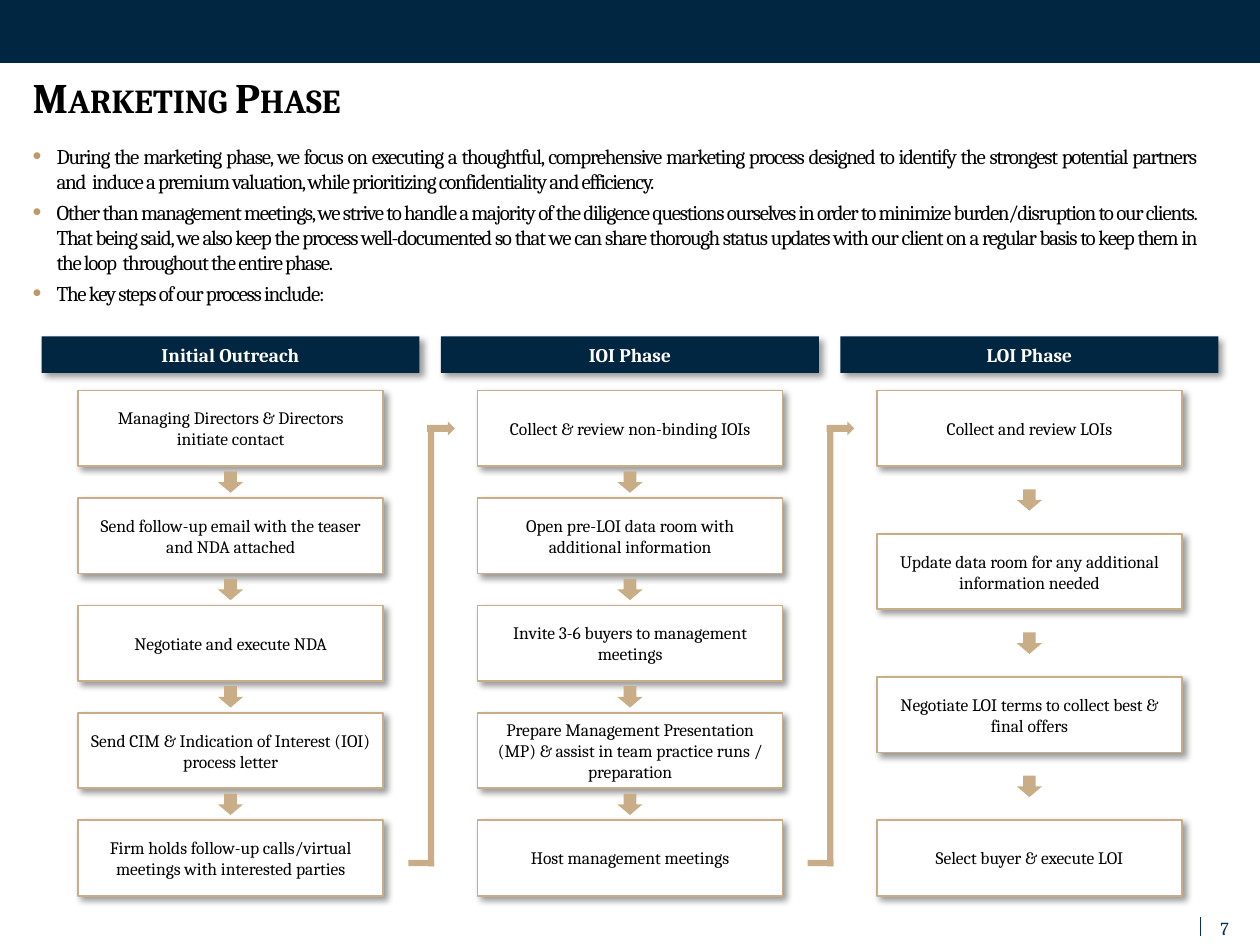
from lxml import etree
from pptx import Presentation
from pptx.dml.color import RGBColor
from pptx.enum.shapes import MSO_CONNECTOR, MSO_SHAPE
from pptx.enum.text import MSO_ANCHOR, MSO_AUTO_SIZE, PP_ALIGN
from pptx.oxml.ns import qn
from pptx.util import Inches, Pt

RECT, DOWN_ARROW = MSO_SHAPE.RECTANGLE, MSO_SHAPE.DOWN_ARROW
CENTER, JUSTIFY = PP_ALIGN.CENTER, PP_ALIGN.JUSTIFY
MIDDLE, TOP = MSO_ANCHOR.MIDDLE, MSO_ANCHOR.TOP
NAVY, RULE, TAN, BULLET = "002641", "00355F", "C8AD87", "BB9A69"
BLACK, WHITE = "000000", "FFFFFF"
FONT = "Cambria"

# Square grid: the slide is 100 columns wide and 75 rows high
UNIT = Inches(10) / 100
COLUMN_W, COLUMN_PITCH = 30, 31.7
HEADER_H, STEP_W, STEP_H = 2.9, 24.2, 6
ARROW_W, ARROW_H = 2, 1.7
BAR = 0.5

TITLE = "Marketing Phase"
POINTS = [
    "During the marketing phase, we focus on executing a thoughtful, comprehensive marketing "
    "process designed to identify the strongest potential partners and  induce a premium "
    "valuation, while prioritizing confidentiality and efficiency.",
    "Other than management meetings, we strive to handle a majority of the diligence questions "
    "ourselves in order to minimize burden/disruption to our clients. That being said, we also "
    "keep the process well-documented so that we can share thorough status updates with our "
    "client on a regular basis to keep them in the loop  throughout the entire phase.",
    "The key steps of our process include:",
]
PHASES = {
    "Initial Outreach": [
        "Managing Directors & Directors initiate contact",
        "Send follow-up email with the teaser and NDA attached",
        "Negotiate and execute NDA",
        "Send CIM & Indication of Interest (IOI) process letter",
        "Firm holds follow-up calls/virtual meetings with interested parties",
    ],
    "IOI Phase": [
        "Collect & review non-binding IOIs",
        "Open pre-LOI data room with additional information",
        "Invite 3-6 buyers to management meetings",
        "Prepare Management Presentation (MP) & assist in team practice runs / preparation",
        "Host management meetings",
    ],
    "LOI Phase": [
        "Collect and review LOIs",
        "Update data room for any additional information needed",
        "Negotiate LOI terms to collect best & final offers",
        "Select buyer & execute LOI",
    ],
}


def rgb(color):
    return RGBColor.from_string(color)


def grid(*lengths):
    return [round(length * UNIT) for length in lengths]


def add_xml(parent, tag, **attributes):
    return etree.SubElement(parent, qn(tag), attributes)


def write(paragraph, text, size, color, bold=False, **run_attributes):
    run = paragraph.add_run()
    run.text = text
    for name, value in dict(name=FONT, size=Pt(size), bold=bold).items():
        setattr(run.font, name, value)
    run.font.color.rgb = rgb(color)
    for name, value in run_attributes.items():
        run._r.get_or_add_rPr().set(name, value)


def frame_text(shape, anchor=MIDDLE, side=0.05, edge=0.05):
    frame = shape.text_frame
    settings = dict(word_wrap=True, vertical_anchor=anchor,
                    margin_left=Inches(side), margin_right=Inches(side),
                    margin_top=Inches(edge), margin_bottom=Inches(edge))
    for name, value in settings.items():
        setattr(frame, name, value)
    return frame


def add_block(slide, box, fill, kind=RECT, line=None, rotation=0):
    block = slide.shapes.add_shape(kind, *grid(*box))
    block.shadow.inherit = False
    block.fill.solid()
    block.fill.fore_color.rgb = rgb(fill)
    block.rotation = rotation
    if line:
        block.line.color.rgb = rgb(line)
        block.line.width = Pt(1)
    else:
        block.line.fill.background()
    return block


def add_card(slide, box, text, fill, color, size, bold=False, line=None, side=0.1):
    card = add_block(slide, box, fill, line=line)
    effects = card._element.spPr.find(qn("a:effectLst"))
    shadow = add_xml(effects, "a:outerShdw", blurRad=str(Pt(4)), dist=str(Pt(3)),
                     dir="2700000", algn="tl", rotWithShape="0")
    add_xml(add_xml(shadow, "a:srgbClr", val=BLACK), "a:alpha", val="40000")
    paragraph = frame_text(card, side=side).paragraphs[0]
    paragraph.alignment = CENTER
    write(paragraph, text, size, color, bold)
    return card


def add_banner(slide, box):
    add_block(slide, box, NAVY)


def add_page_number(slide, box, number):
    left, top, width, height = box
    rule = slide.shapes.add_connector(
        MSO_CONNECTOR.STRAIGHT, *grid(left + 0.3, top + 0.4, left + 0.3, top + 1.9))
    rule.line.color.rgb = rgb(RULE)
    rule.line.width = Pt(0.75)
    add_xml(rule._element.spPr, "a:effectLst")
    label = slide.shapes.add_textbox(*grid(*box))
    paragraph = frame_text(label, TOP, side=0.09, edge=0.04).paragraphs[0]
    paragraph.alignment = CENTER
    write(paragraph, number, 10.5, RULE)


def add_title(slide, box):
    title = slide.shapes.add_textbox(*grid(*box))
    paragraph = frame_text(title, TOP).paragraphs[0]
    paragraph.line_spacing = 0.9
    write(paragraph, TITLE, 24, BLACK, True, cap="small")


def add_points(slide, box):
    frame = frame_text(slide.shapes.add_textbox(*grid(*box)), TOP)
    for index, point in enumerate(POINTS):
        paragraph = frame.add_paragraph() if index else frame.paragraphs[0]
        paragraph.alignment = JUSTIFY
        if index:
            paragraph.space_before = Pt(3)
        properties = paragraph._p.get_or_add_pPr()
        indent = Inches(0.19)
        properties.set("marL", str(indent))
        properties.set("indent", str(-indent))
        add_xml(add_xml(properties, "a:buClr"), "a:srgbClr", val=BULLET)
        add_xml(properties, "a:buSzPct", val="120000")
        add_xml(properties, "a:buFont", typeface="Arial")
        add_xml(properties, "a:buChar", char="•")
        write(paragraph, point, 12, BLACK, spc="-70")


def add_phase(slide, box, name, steps):
    left, top, width, height = box
    # Header
    header = add_card(slide, (left, top, width, HEADER_H), name, NAVY, WHITE, 11, True, side=0.05)
    header.text_frame.auto_size = MSO_AUTO_SIZE.SHAPE_TO_FIT_TEXT
    # Steps spread evenly, with an arrow in the middle of each gap
    first = top + 4.3
    pitch = (top + height - STEP_H - first) / (len(steps) - 1)
    step_left = left + (width - STEP_W) / 2
    arrow_left = step_left + (STEP_W - ARROW_W) / 2
    for index, step in enumerate(steps):
        y = first + index * pitch
        add_card(slide, (step_left, y, STEP_W, STEP_H), step, WHITE, BLACK, 10, line=TAN)
        if index:
            arrow_top = y - (pitch - STEP_H + ARROW_H) / 2
            add_block(slide, (arrow_left, arrow_top, ARROW_W, ARROW_H), TAN, DOWN_ARROW)


def add_phase_link(slide, box):
    """Elbow from the last step of one phase up to the first step of the next."""
    left, top, width, height = box
    middle, foot = left + width / 2, top + height
    add_block(slide, (left, foot - BAR, middle - left + BAR / 2, BAR), TAN)
    add_block(slide, (middle - height / 2, top + (height - BAR) / 2, height, BAR),
              TAN, rotation=270)
    add_block(slide, (middle + 0.25, top - 0.85, 1.1, 2.2), TAN, DOWN_ARROW, rotation=270)


def main():
    deck = Presentation()
    deck.slide_width, deck.slide_height = grid(100, 75)
    slide = deck.slides.add_slide(deck.slide_layouts[6])
    add_banner(slide, (0, 0, 100, 5))
    add_page_number(slide, (95, 72.4, 4.4, 2.4), "7")
    add_title(slide, (2.1, 5.6, 91.4, 4.9))
    add_points(slide, (2.1, 10.9, 93.4, 56.4))
    for index, (name, steps) in enumerate(PHASES.items()):
        left = 3.3 + index * COLUMN_PITCH
        add_phase(slide, (left, 26.7, COLUMN_W, 44.4), name, steps)
        if index < len(PHASES) - 1:
            add_phase_link(slide, (left + 29.1, 33.75, 3.6, 35))
    deck.save("out.pptx")


if __name__ == "__main__":
    main()
